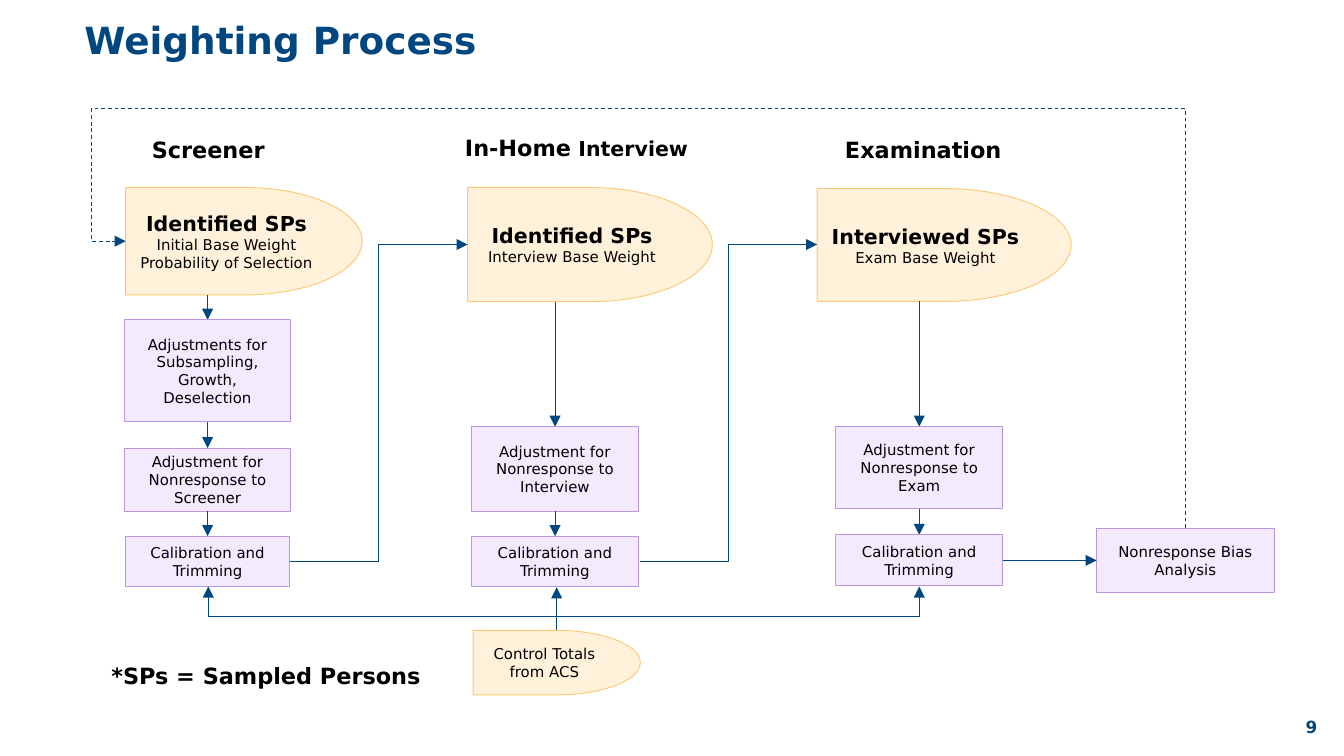
from lxml import etree
from pptx import Presentation
from pptx.dml.color import RGBColor
from pptx.enum.dml import MSO_LINE
from pptx.enum.shapes import MSO_CONNECTOR, MSO_SHAPE
from pptx.enum.text import MSO_ANCHOR, PP_ALIGN
from pptx.oxml.ns import qn
from pptx.util import Inches, Pt

NAVY = RGBColor(0x00, 0x46, 0x7F)
BLACK = RGBColor(0x00, 0x00, 0x00)
CREAM = RGBColor(0xFF, 0xF1, 0xDA)
AMBER = RGBColor(0xFC, 0xCA, 0x76)
LILAC = RGBColor(0xF3, 0xEA, 0xFE)
PURPLE = RGBColor(0xBA, 0x96, 0xE0)
FONT = "DejaVu Sans"
COLS, ROWS = 100, 56.25  # square grid cells, a tenth of an inch each


def cells(n):
    return Inches(n / 10)


def write(tf, paragraphs, color=BLACK, align=PP_ALIGN.CENTER, anchor=MSO_ANCHOR.MIDDLE,
          spacing=None):
    """Each paragraph is a list of (text, size, bold) runs."""
    tf.word_wrap = True
    tf.vertical_anchor = anchor
    for i, runs in enumerate(paragraphs):
        p = tf.add_paragraph() if i else tf.paragraphs[0]
        p.alignment = align
        if spacing:
            p.line_spacing = spacing
        for text, size, bold in runs:
            r = p.add_run()
            r.text = text
            r.font.name, r.font.size, r.font.bold = FONT, Pt(size), bold
            r.font.color.rgb = color


def label(s, box, runs, **fmt):
    sp = s.shapes.add_textbox(*map(cells, box))
    write(sp.text_frame, [runs], **fmt)
    return sp


def node(s, kind, box, paragraphs, fill, line):
    sp = s.shapes.add_shape(kind, *map(cells, box))
    sp.shadow.inherit = False
    sp.fill.solid()
    sp.fill.fore_color.rgb = fill
    sp.line.color.rgb = line
    sp.line.width = Pt(0.5)
    write(sp.text_frame, paragraphs)


def source_node(s, box, paragraphs):
    node(s, MSO_SHAPE.FLOWCHART_DELAY, box, paragraphs, CREAM, AMBER)


def step_node(s, box, text):
    node(s, MSO_SHAPE.RECTANGLE, box, [[(t, 8, False)] for t in text.split("\n")], LILAC, PURPLE)


def arrow(s, start, end, preset="line"):
    kind = MSO_CONNECTOR.STRAIGHT if preset == "line" else MSO_CONNECTOR.ELBOW
    c = s.shapes.add_connector(kind, *map(cells, (*start, *end)))
    c.line.color.rgb = NAVY
    c.line.width = Pt(0.5)
    pr = c._element.spPr
    pr.find(qn("a:prstGeom")).set("prst", preset)
    etree.SubElement(c.line._get_or_add_ln(), qn("a:tailEnd"), type="triangle")
    etree.SubElement(pr, qn("a:effectLst"))
    return c


def stage(s, box, axis, heading, heading_box, source, source_box, steps):
    """One column: heading, source, then steps centred on the axis and joined by arrows."""
    x, y = box

    def place(dx, dy, w, h):
        return x + dx, y + dy, w, h

    label(s, place(*heading_box), heading)
    source_node(s, place(*source_box), [[(source[0], 11, True)], [(source[1], 8, False)]])
    bottom = source_box[1] + source_box[3]
    for text, top, w, h in steps:
        arrow(s, (x + axis, y + bottom), (x + axis, y + top))
        step_node(s, place(axis - w / 2, top, w, h), text)
        bottom = top + h


def control_totals(s, box):
    """Source below the columns, feeding all three calibrations."""
    x, y, w, h = box
    center, bus = x + w / 2, y - 1
    source_node(s, box, [[("Control Totals from ACS", 8, False)]])
    arrow(s, (center, y), (center, y - 3.2))
    for target in (15.5, 68.4):
        arrow(s, (center, bus), (target, y - 3.25), "bentConnector2")


def bias_analysis(s, box, target):
    """Final step, with a dashed route back over the columns to the target."""
    x, y, w, h = box
    step_node(s, box, "Nonresponse Bias Analysis")
    arrow(s, (x - 7, y + h / 2), (x, y + h / 2))
    # The route is laid out on its side, then turned by 270 degrees.
    start_x = x + w / 2
    across, rise = start_x - target[0], y - target[1]
    cx, cy = (start_x + target[0]) / 2, (y + target[1]) / 2
    c = arrow(s, (cx - rise / 2, cy + across / 2), (cx + rise / 2, cy - across / 2),
              "bentConnector4")
    c.line.dash_style = MSO_LINE.DASH
    c._element.spPr.find(qn("a:xfrm")).set("rot", str(270 * 60000))
    geom = c._element.spPr.find(qn("a:prstGeom"))
    guides = geom.find(qn("a:avLst"))
    if guides is None:
        guides = etree.SubElement(geom, qn("a:avLst"))
    for name, value in (("adj1", 146300), ("adj2", 103200)):
        etree.SubElement(guides, qn("a:gd"), name=name, fmla=f"val {value}")


def page_text(s):
    label(s, (5.3, 0, 91.7, 6.3), [("Weighting Process", 20, True)], color=NAVY,
          align=PP_ALIGN.LEFT, spacing=0.9)
    label(s, (7.3, 48.8, 25.5, 3), [("*SPs = Sampled Persons", 12, True)],
          align=PP_ALIGN.LEFT, anchor=MSO_ANCHOR.TOP)
    number = label(s, (97.15, 52.55, 3.5, 3), [("9", 9, True)], color=NAVY, align=PP_ALIGN.LEFT)
    number.text_frame.margin_left = 0


def main():
    prs = Presentation()
    prs.slide_width, prs.slide_height = cells(COLS), cells(ROWS)
    s = prs.slides.add_slide(prs.slide_layouts[6])
    calibration = "Calibration and\nTrimming"
    page_text(s)
    stage(s, (9.35, 9.4), 6.1, [("Screener", 12, True)], (0.5, 0.2, 11.3, 3),
          ("Identified SPs", "Initial Base Weight Probability of Selection"), (0, 4.55, 17.6, 8),
          [("Adjustments for\nSubsampling,\nGrowth,\nDeselection", 14.4, 12.3, 7.6),
           ("Adjustment for Nonresponse to Screener", 23.95, 12.4, 4.7),
           (calibration, 30.5, 12.2, 3.75)])
    stage(s, (34.8, 9.4), 6.5, [("In-Home", 12, True), (" Interview", 11, True)],
          (-2, 0.05, 20.2, 3),
          ("Identified SPs", "Interview Base Weight"), (0, 4.55, 18.2, 8.5),
          [("Adjustment for Nonresponse to Interview", 22.35, 12.4, 6.3),
           (calibration, 30.5, 12.4, 3.75)])
    stage(s, (60.8, 9.4), 7.6, [("Examination", 12, True)], (0, 0.2, 15.8, 3),
          ("Interviewed SPs", "Exam Base Weight"), (0, 4.63, 18.9, 8.4),
          [("Adjustment for Nonresponse to Exam", 22.35, 12.4, 6.1),
           (calibration, 30.4, 12.4, 3.8)])
    for x in (21.6, 47.6):
        arrow(s, (x, 41.8), (x + 13.2, 18.2), "bentConnector3")
    control_totals(s, (35.2, 46.9, 12.45, 4.8))
    bias_analysis(s, (81.6, 39.3, 13.2, 4.8), (9.35, 17.95))
    prs.save("out.pptx")


if __name__ == "__main__":
    main()
